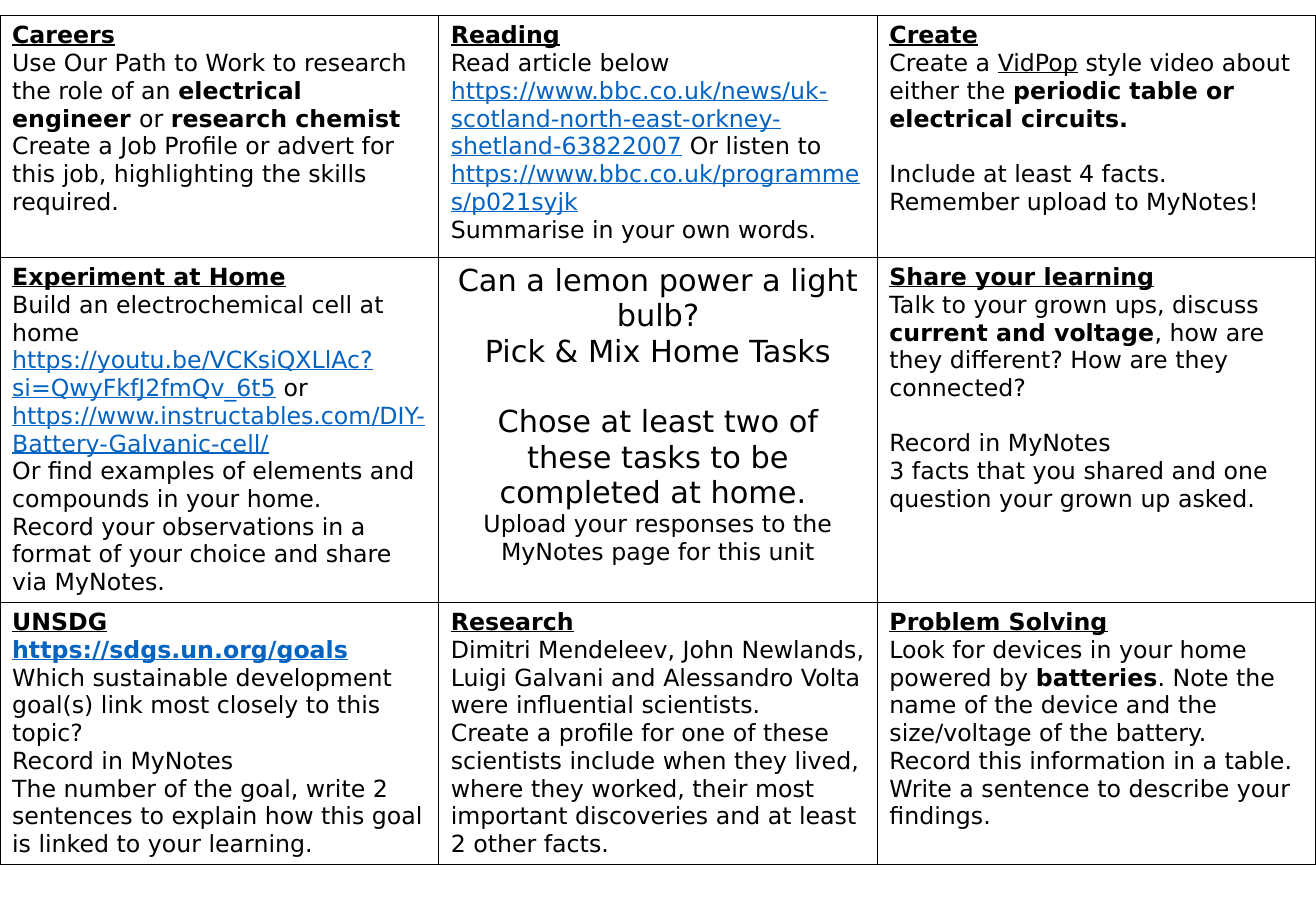
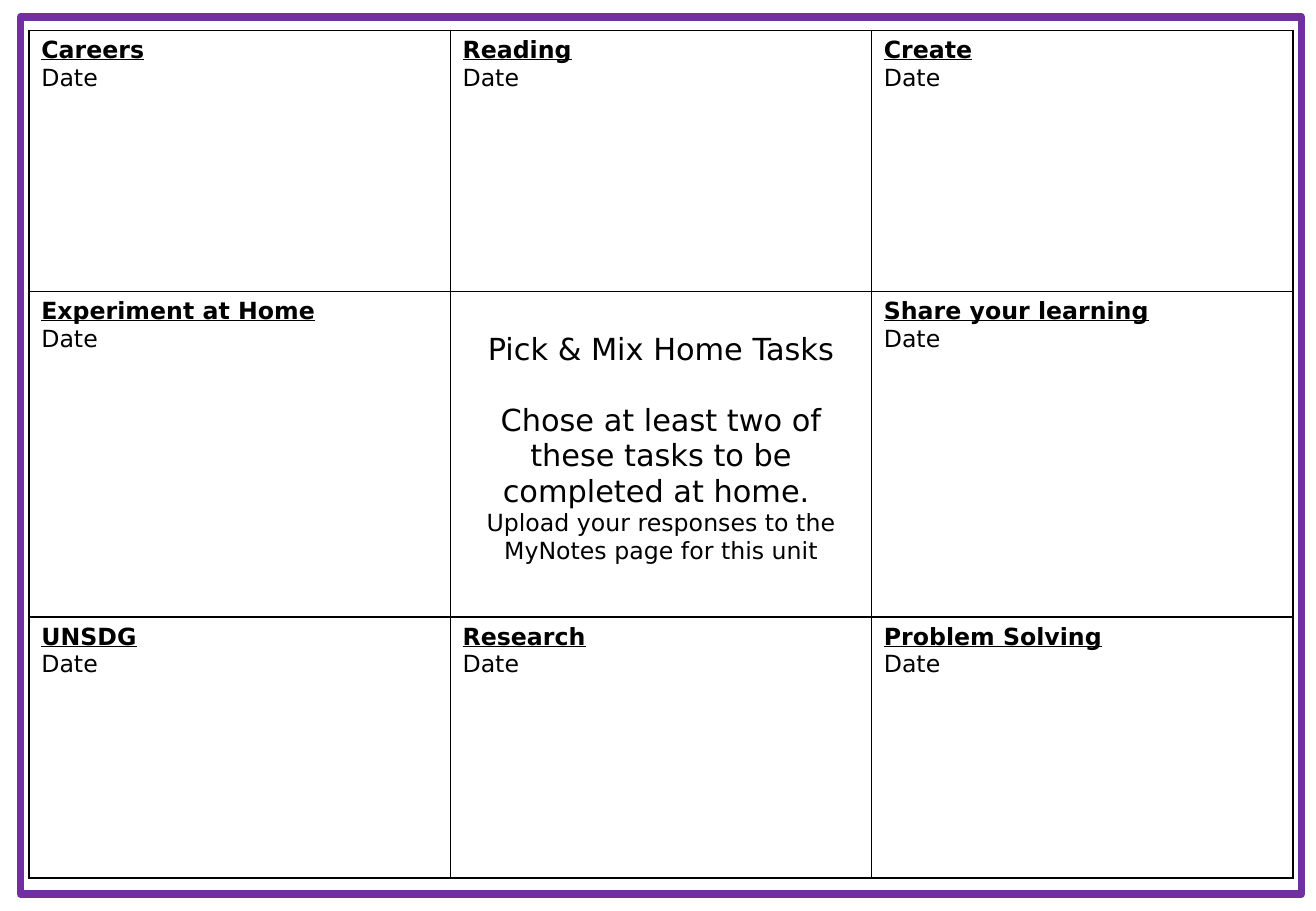
from collections import namedtuple
from itertools import product

from lxml.etree import SubElement as Sub
from pptx import Presentation
from pptx.dml.color import RGBColor
from pptx.enum.shapes import MSO_SHAPE as Shape
from pptx.enum.text import PP_ALIGN as Align
from pptx.oxml.ns import qn
from pptx.util import Inches, Pt

BLACK = RGBColor(0x00, 0x00, 0x00)
BLUE = RGBColor(0x05, 0x63, 0xC1)
PURPLE = RGBColor(0x70, 0x30, 0xA0)
FONT = "DejaVu Sans"
BODY, LARGE = 14, 18
LEAD = 1.17
WIDE, HIGH = 10.83, 7.5
SIDE = 3
GAP = ""

Run = namedtuple("Run", "text bold line color", defaults=(None, None, None))

HEADS = (
    "Careers", "Reading", "Create",
    "Experiment at Home", None, "Share your learning",
    "UNSDG", "Research", "Problem Solving",
)
MID = (
    "Pick & Mix Home Tasks",
    GAP,
    "Chose at least two of these tasks to be completed at home. ",
)
CLOSE = "Upload your responses to the MyNotes page for this unit"


def bold(text):
    """Return a bold run."""
    return Run(text, bold=True)


def link(text, heavy=None):
    """Return a run that looks like a web address."""
    return Run(text, heavy, True, BLUE)


TASKS = (
    (
        ("Use Our Path to Work to research the role of an ",
         bold("electrical engineer "), "or ", bold("research chemist")),
        "Create a Job Profile or advert for this job, highlighting the skills required.",
    ),
    (
        ("Read article below ",
         link("https://www.bbc.co.uk/news/uk-scotland-north-east-orkney-shetland-63822007"),
         " Or listen to ",
         link("https://www.bbc.co.uk/programmes/p021syjk")),
        "Summarise in your own words.",
    ),
    (
        ("Create a ", Run("VidPop", line=True), " style video about either the ",
         bold("periodic table or electrical circuits.")),
        GAP,
        "Include at least 4 facts.",
        "Remember upload to MyNotes!",
    ),
    (
        ("Build an electrochemical cell at home ",
         link("https://youtu.be/VCKsiQXLlAc?si=QwyFkfJ2fmQv_6t5"), " or"),
        (link("https://www.instructables.com/DIY-Battery-Galvanic-cell/"),),
        "Or find examples of elements and compounds in your home.",
        "Record your observations in a format of your choice and share via MyNotes.",
    ),
    ("Can a lemon power a light bulb?",) + MID,
    (
        ("Talk to your grown ups, discuss ", bold("current and voltage"),
         ", how are they different? How are they connected?"),
        GAP,
        "Record in MyNotes",
        "3 facts that you shared and one question your grown up asked.",
    ),
    (
        (link("https://sdgs.un.org/goals", True),),
        "Which sustainable development goal(s) link most closely to this topic?",
        "Record in MyNotes",
        "The number of the goal, write 2 sentences to explain how this goal is linked to your learning.",
    ),
    (
        "Dimitri Mendeleev, John Newlands, Luigi Galvani and Alessandro Volta were influential scientists.",
        "Create a profile for one of these scientists include when they lived, where they worked, "
        "their most important discoveries and at least 2 other facts.",
    ),
    (
        ("Look for devices in your home powered by ", bold("batteries"),
         ". Note the name of the device and the size/voltage of the battery."),
        "Record this information in a table. Write a sentence to describe your findings.",
    ),
)
DATES = tuple(("Date",) if head else MID for head in HEADS)


def border(cell):
    """Draw a thin black line on each side of a cell."""
    props = cell._tc.get_or_add_tcPr()
    for spot, tag in enumerate(("a:lnL", "a:lnR", "a:lnT", "a:lnB")):
        line = props.makeelement(qn(tag), {"w": str(Pt(1))})
        props.insert(spot, line)
        fill = Sub(line, qn("a:solidFill"))
        Sub(fill, qn("a:srgbClr"), val=str(BLACK))


def write(para, item, size, align):
    """Fill a paragraph with a string or a row of runs."""
    para.alignment = align
    para.font.name = FONT
    para.font.size = Pt(size)
    para.font.color.rgb = BLACK
    for part in (item,) if isinstance(item, str) else item:
        part = Run(part) if isinstance(part, str) else part
        run = para.add_run()
        run.text = part.text
        if part.bold:
            run.font.bold = True
        if part.line:
            run.font.underline = True
        if part.color:
            run.font.color.rgb = part.color


def fill(cell, head, items):
    """Write one task, or the middle message, in a cell."""
    cell.fill.background()
    border(cell)
    if head:
        lines = [((Run(head, True, True),), BODY)] + [(item, BODY) for item in items]
    else:
        lines = [(item, LARGE) for item in items] + [(CLOSE, BODY)]
    align = Align.LEFT if head else Align.CENTER
    frame = cell.text_frame
    para, space = frame.paragraphs[0], False
    for spot, (item, size) in enumerate(lines):
        if item == GAP:
            space = True
            continue
        if spot:
            para = frame.add_paragraph()
        if space:
            para.space_before = Pt(round(size * LEAD, 1))
        write(para, item, size, align)
        space = False


def grid(slide, left, top, width, rows, tasks):
    """Add the three by three table of tasks and return it."""
    frame = slide.shapes.add_table(
        SIDE, SIDE, Inches(left), Inches(top), Inches(width), Inches(sum(rows)))
    table = frame.table
    table.first_row = table.horz_banding = False
    for row, high in zip(table.rows, rows):
        row.height = Inches(high)
    for col in table.columns:
        col.width = Inches(width / SIDE)
    spots = product(range(SIDE), repeat=2)
    for (row, col), head, items in zip(spots, HEADS, tasks):
        fill(table.cell(row, col), head, items)
    return table


def outline(slide, left, top, width, high):
    """Add the purple frame round the page."""
    box = slide.shapes.add_shape(
        Shape.RECTANGLE, Inches(left), Inches(top), Inches(width), Inches(high))
    box.shadow.inherit = False
    box.fill.background()
    box.line.color.rgb = PURPLE
    box.line.width = Pt(4.5)


def main():
    """Build the task sheet and the answer sheet."""
    deck = Presentation()
    deck.slide_width, deck.slide_height = Inches(WIDE), Inches(HIGH)
    blank = deck.slide_layouts[6]
    grid(deck.slides.add_slide(blank), 0, 0.13, WIDE, (1.99, 2.84, 2.15), TASKS)
    sheet = deck.slides.add_slide(blank)
    table = grid(sheet, 0.24, 0.25, 10.4, (2.15, 2.68, 2.15), DATES)
    table.cell(1, 1).margin_top = Inches(0.34)
    outline(sheet, 0.17, 0.14, 10.54, 7.22)
    deck.save("out.pptx")


if __name__ == "__main__":
    main()
